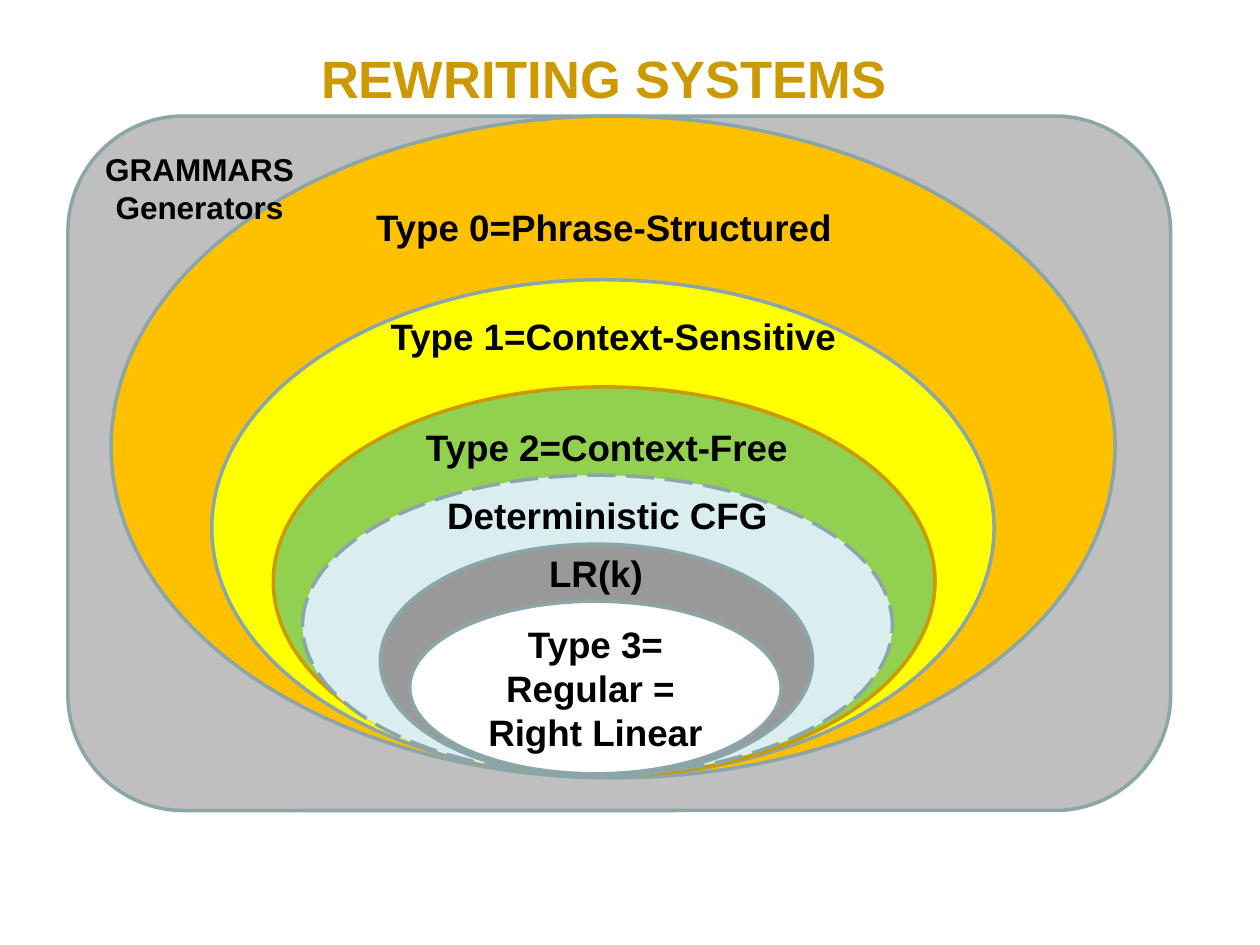
from dataclasses import dataclass

from pptx import Presentation
from pptx.dml.color import RGBColor
from pptx.enum.dml import MSO_LINE
from pptx.enum.shapes import MSO_SHAPE
from pptx.enum.text import MSO_ANCHOR, MSO_AUTO_SIZE, PP_ALIGN
from pptx.util import Cm, Pt


@dataclass(frozen=True)
class Theme:
    font: str = "Arial"
    text: str = "000000"
    gold: str = "CC9900"
    outline: str = "8AA6A8"
    frame: str = "BFBFBF"
    phrase_structured: str = "FFC000"
    context_sensitive: str = "FFFF00"
    context_free: str = "92D050"
    deterministic: str = "DAEDEF"
    lr: str = "999999"
    regular: str = "FFFFFF"
    title_size: int = 30
    label_size: int = 21
    caption_size: int = 18
    line_width: int = 2


THEME = Theme()


def color(value):
    return RGBColor.from_string(value)


def write_text(shape, text, size, text_color=THEME.text, anchor=MSO_ANCHOR.TOP):
    """Fill a shape with bold, centred text."""
    text_frame = shape.text_frame
    text_frame.text = text
    text_frame.word_wrap = True
    text_frame.auto_size = MSO_AUTO_SIZE.NONE
    text_frame.vertical_anchor = anchor
    for paragraph in text_frame.paragraphs:
        paragraph.alignment = PP_ALIGN.CENTER
        for run in paragraph.runs:
            run.font.name = THEME.font
            run.font.size = Pt(size)
            run.font.bold = True
            run.font.color.rgb = color(text_color)


def add_region(slide, box, fill, outline=THEME.outline, kind=MSO_SHAPE.OVAL):
    """Add one filled and outlined region of the hierarchy."""
    shape = slide.shapes.add_shape(kind, *map(Cm, box))
    shape.shadow.inherit = False
    shape.fill.solid()
    shape.fill.fore_color.rgb = color(fill)
    shape.line.color.rgb = color(outline)
    shape.line.width = Pt(THEME.line_width)
    return shape


def add_label(slide, box, text, size=THEME.label_size):
    write_text(slide.shapes.add_textbox(*map(Cm, box)), text, size)


def set_title(slide, box, text):
    title = slide.shapes.title
    title.left, title.top, title.width, title.height = map(Cm, box)
    write_text(title, text, THEME.title_size, THEME.gold)


def main():
    presentation = Presentation()
    presentation.slide_width = Cm(25.4)
    presentation.slide_height = Cm(19.05)
    slide = presentation.slides.add_slide(presentation.slide_layouts[5])

    set_title(slide, (4.06, 0.81, 16.23, 1.55), "REWRITING SYSTEMS")

    # Nested language classes, outermost first
    add_region(slide, (1.37, 2.34, 22.23, 14), THEME.frame,
               kind=MSO_SHAPE.ROUNDED_RECTANGLE)
    add_region(slide, (2.24, 2.34, 20.24, 13.34), THEME.phrase_structured)
    add_region(slide, (4.27, 5.64, 15.77, 10.01), THEME.context_sensitive)
    add_region(slide, (5.51, 7.8, 13.34, 7.85), THEME.context_free, THEME.gold)
    deterministic = add_region(slide, (6.1, 9.58, 11.89, 6.05), THEME.deterministic)
    deterministic.line.dash_style = MSO_LINE.LONG_DASH
    add_region(slide, (7.67, 10.97, 8.71, 4.7), THEME.lr)
    regular = add_region(slide, (8.26, 12.12, 7.49, 3.48), THEME.regular)
    write_text(regular, "Type 3=\vRegular = \nRight Linear", THEME.label_size,
               anchor=MSO_ANCHOR.MIDDLE)

    # Labels of the classes
    add_label(slide, (0.94, 2.9, 6.17, 1.8), "GRAMMARS\nGenerators",
              THEME.caption_size)
    add_label(slide, (7.11, 4.01, 10.13, 1.14), "Type 0=Phrase-Structured")
    add_label(slide, (7.59, 6.2, 9.55, 1.14), "Type 1=Context-Sensitive")
    add_label(slide, (7.98, 8.43, 8.51, 1.14), "Type 2=Context-Free")
    add_label(slide, (8.74, 9.8, 7.01, 1.14), "Deterministic CFG")
    add_label(slide, (10.16, 10.97, 3.71, 1.14), "LR(k)")

    presentation.save("out.pptx")


if __name__ == "__main__":
    main()
